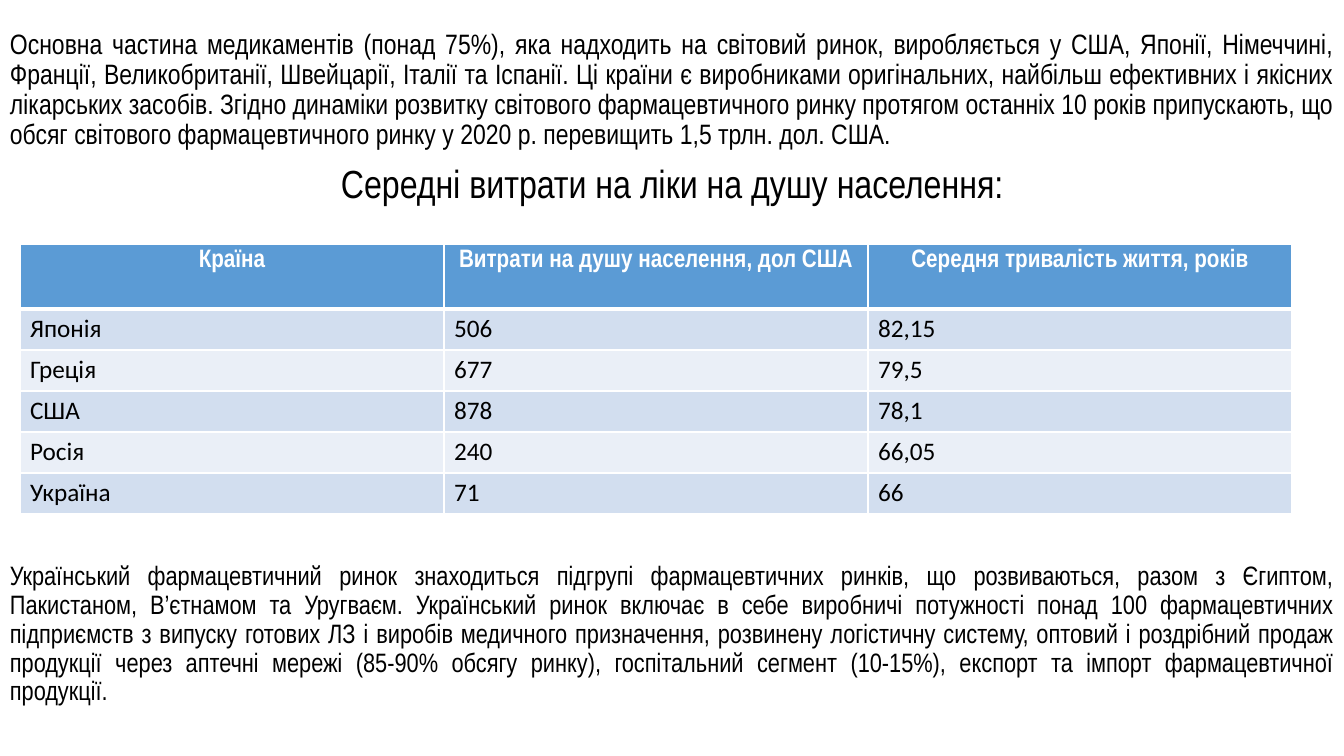
from lxml.etree import SubElement
from pptx import Presentation
from pptx.dml.color import RGBColor
from pptx.enum.text import PP_ALIGN
from pptx.oxml.ns import qn
from pptx.util import Pt

PX = 914400 / 100.8
HEX = {"ink": "000000", "white": "FFFFFF", "head": "5B9BD5", "odd": "D2DEEF", "even": "EAEFF7"}
INTRO = (
    "Основна частина медикаментів (понад 75%), яка надходить на світовий ринок, "
    "виробляється у США, Японії, Німеччині, Франції, Великобританії, Швейцарії, Італії "
    "та Іспанії. Ці країни є виробниками оригінальних, найбільш ефективних і якісних "
    "лікарських засобів. Згідно динаміки розвитку світового фармацевтичного ринку "
    "протягом останніх 10 років припускають, що обсяг світового фармацевтичного ринку "
    "у 2020 р. перевищить 1,5 трлн. дол. США."
)
TITLE = "Середні витрати на ліки на душу населення:"
MARKET = (
    "Український фармацевтичний ринок знаходиться підгрупі фармацевтичних ринків, що "
    "розвиваються, разом з Єгиптом, Пакистаном, В’єтнамом та Уругваєм. Український ринок "
    "включає в себе виробничі потужності понад 100 фармацевтичних підприємств з випуску "
    "готових ЛЗ і виробів медичного призначення, розвинену логістичну систему, оптовий і "
    "роздрібний продаж продукції через аптечні мережі (85-90% обсягу ринку), госпітальний "
    "сегмент (10-15%), експорт та імпорт фармацевтичної продукції."
)
ROWS = [
    ("Країна", "Витрати на душу населення, дол США", "Середня тривалість життя, років"),
    ("Японія", "506", "82,15"),
    ("Греція", "677", "79,5"),
    ("США", "878", "78,1"),
    ("Росія", "240", "66,05"),
    ("Україна", "71", "66"),
]


def px(*nums):
    """Turn pixel lengths into EMU."""
    return [round(n * PX) for n in nums]


def write(par, text, size=18, font="Arial Narrow", color="ink", bold=False,
          align=PP_ALIGN.LEFT, line=None, before=0):
    par.alignment = align
    par.line_spacing = line
    par.space_before = Pt(before)
    run = par.add_run()
    run.text = text
    run.font.size = Pt(size)
    run.font.name = font
    run.font.bold = bold
    run.font.color.rgb = RGBColor.from_string(HEX[color])


deck = Presentation()
deck.slide_width, deck.slide_height = px(1344, 756)
slide = deck.slides.add_slide(deck.slide_layouts[6])

# Body text, with room for the table kept by the space before the last paragraph
body = slide.shapes.add_textbox(*px(0, 25, 1344, 712)).text_frame
body.word_wrap = True
parts = [
    (INTRO, 20, PP_ALIGN.JUSTIFY, 10),
    (TITLE, 28, PP_ALIGN.CENTER, 10),
    (MARKET, 19, PP_ALIGN.JUSTIFY, 254),
]
for i, (text, size, align, before) in enumerate(parts):
    par = body.add_paragraph() if i else body.paragraphs[0]
    write(par, text, size=size, align=align, line=0.9, before=before)

# Spending table
table = slide.shapes.add_table(len(ROWS), 3, *px(20, 244, 1272, 270)).table
for col in table.columns:
    col.width, = px(424)
for r, row in enumerate(ROWS):
    table.rows[r].height, = px(41 if r else 65)
    fill = ("odd" if r % 2 else "even") if r else "head"
    for c, text in enumerate(row):
        cell = table.cell(r, c)
        if r:
            write(cell.text_frame.paragraphs[0], text, font="Calibri")
        else:
            write(cell.text_frame.paragraphs[0], text, color="white", bold=True,
                  align=PP_ALIGN.CENTER)
        props = cell._tc.get_or_add_tcPr()
        for side in "LRTB":
            thick = (r, side) in [(0, "B"), (1, "T")]
            edge = SubElement(props, qn(f"a:ln{side}"), w=str(Pt(3 if thick else 1)))
            paint = SubElement(edge, qn("a:solidFill"))
            SubElement(paint, qn("a:srgbClr"), val=HEX["white"])
        cell.fill.solid()
        cell.fill.fore_color.rgb = RGBColor.from_string(HEX[fill])

deck.save("out.pptx")
